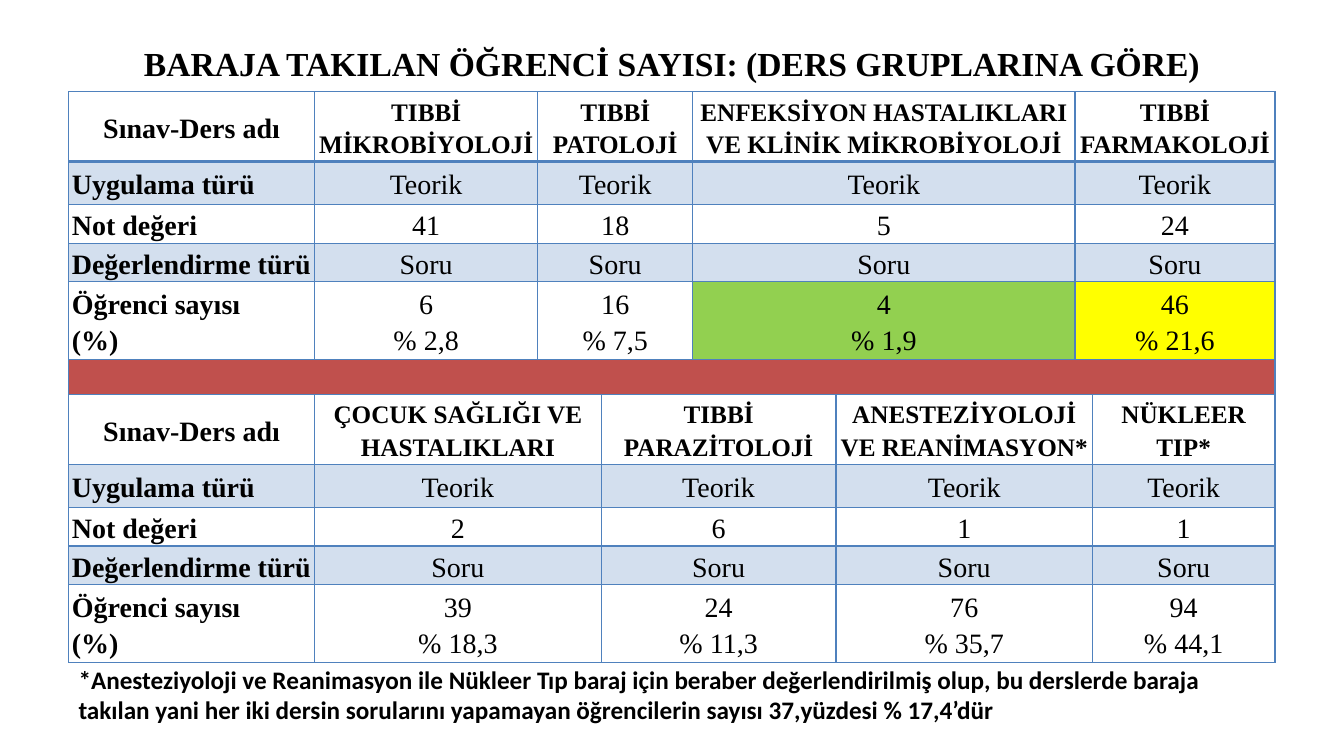
from lxml.etree import SubElement
from pptx import Presentation
from pptx.dml.color import RGBColor
from pptx.enum.text import MSO_ANCHOR as Anchor, PP_ALIGN as Align
from pptx.oxml.ns import qn
from pptx.util import Cm, Pt

BLACK = RGBColor(0x00, 0x00, 0x00)
BORDER_BLUE = RGBColor(0x4F, 0x81, 0xBD)
PALE_BLUE = RGBColor(0xD3, 0xDF, 0xEE)
GREEN = RGBColor(0x92, 0xD0, 0x50)
YELLOW = RGBColor(0xFF, 0xFF, 0x00)
RED = RGBColor(0xC0, 0x50, 0x4D)
SERIF = "Times New Roman"
SANS = "Calibri"

COLUMN_WIDTHS = [6.2, 5.62, 1.6, 2.31, 3.61, 6.02, 0.44, 4.6]
GROUP_HEIGHTS = [1.09, 0.89, 0.89, 1.8]
ROW_HEIGHTS = [1.7, *GROUP_HEIGHTS, 0.89, 1.65, *GROUP_HEIGHTS]
SEPARATOR_ROW = 5
ROW_LABELS = ["Sınav-Ders adı", "Uygulama türü", "Not değeri",
              "Değerlendirme türü", "Öğrenci sayısı\n(%)"]

# (first column, last column, course, grade value, students, percentage, highlight)
FIRST_GROUP = [
    (1, 1, "TIBBİ MİKROBİYOLOJİ", "41", "6", "% 2,8", None),
    (2, 3, "TIBBİ PATOLOJİ", "18", "16", "% 7,5", None),
    (4, 5, "ENFEKSİYON HASTALIKLARI VE KLİNİK MİKROBİYOLOJİ", "5", "4", "% 1,9", GREEN),
    (6, 7, "TIBBİ FARMAKOLOJİ", "24", "46", "% 21,6", YELLOW),
]
SECOND_GROUP = [
    (1, 2, "ÇOCUK SAĞLIĞI VE HASTALIKLARI", "2", "39", "% 18,3", None),
    (3, 4, "TIBBİ PARAZİTOLOJİ", "6", "24", "% 11,3", None),
    (5, 6, "ANESTEZİYOLOJİ VE REANİMASYON*", "1", "76", "% 35,7", None),
    (7, 7, "NÜKLEER TIP*", "1", "94", "% 44,1", None),
]


def write_text(frame, text, size=20, font=SERIF, bold=False, align=Align.LEFT, spacing=None):
    """Fill a text frame, one paragraph for each line of text."""
    frame.word_wrap = True
    for index, line in enumerate(text.split("\n")):
        paragraph = frame.add_paragraph() if index else frame.paragraphs[0]
        paragraph.alignment = align
        if spacing:
            paragraph.line_spacing = spacing
        run = paragraph.add_run()
        run.text = line
        run.font.size = Pt(size)
        run.font.name = font
        run.font.bold = bold
        run.font.color.rgb = BLACK


def set_borders(cell, top=1, bottom=1):
    properties = cell._tc.get_or_add_tcPr()
    for side, points in (("L", 1), ("R", 1), ("T", top), ("B", bottom)):
        line = SubElement(properties, qn(f"a:ln{side}"), w=str(Pt(points)))
        fill = SubElement(line, qn("a:solidFill"))
        SubElement(fill, qn("a:srgbClr"), val=str(BORDER_BLUE))


def set_fill(cell, color):
    if color is None:
        cell.fill.background()
    else:
        cell.fill.solid()
        cell.fill.fore_color.rgb = color


def write_cell(cell, text, color=None, **text_format):
    cell.vertical_anchor = Anchor.MIDDLE
    set_fill(cell, color)
    write_text(cell.text_frame, text, spacing=1.15, **text_format)


def fill_course_group(table, top_row, courses):
    """Write the five rows of one group of courses, starting at top_row."""
    for offset, label in enumerate(ROW_LABELS):
        write_cell(table.cell(top_row + offset, 0), label, PALE_BLUE if offset % 2 else None,
                   bold=True, align=Align.LEFT if offset else Align.CENTER)
    for first, last, course, grade, students, percentage, highlight in courses:
        values = [course, "Teorik", grade, "Soru", f"{students}\n{percentage}"]
        fills = [None, PALE_BLUE, None, PALE_BLUE, highlight]
        for offset, (value, color) in enumerate(zip(values, fills)):
            cell = table.cell(top_row + offset, first)
            if last > first:
                cell.merge(table.cell(top_row + offset, last))
            write_cell(cell, value, color, size=20 if offset else 18,
                       bold=offset == 0, align=Align.CENTER)


def add_course_table(slide, left, top):
    frame = slide.shapes.add_table(len(ROW_HEIGHTS), len(COLUMN_WIDTHS), left, top,
                                   Cm(sum(COLUMN_WIDTHS)), Cm(sum(ROW_HEIGHTS)))
    table = frame.table
    table.first_row = False
    table.horz_banding = False
    for column, width in zip(table.columns, COLUMN_WIDTHS):
        column.width = Cm(width)
    for index, (row, height) in enumerate(zip(table.rows, ROW_HEIGHTS)):
        row.height = Cm(height)
        for cell in row.cells:
            cell.margin_left = cell.margin_right = Cm(0.08)
            cell.margin_top = cell.margin_bottom = 0
            set_borders(cell, top=2.25 if index == 1 else 1, bottom=2.25 if index == 0 else 1)

    fill_course_group(table, 0, FIRST_GROUP)
    separator = table.cell(SEPARATOR_ROW, 0)
    separator.merge(table.cell(SEPARATOR_ROW, len(COLUMN_WIDTHS) - 1))
    set_fill(separator, RED)
    fill_course_group(table, SEPARATOR_ROW + 1, SECOND_GROUP)


def add_title(slide, left, top, width, height):
    frame = slide.shapes.add_textbox(left, top, width, height).text_frame
    frame.vertical_anchor = Anchor.MIDDLE
    write_text(frame, "BARAJA TAKILAN ÖĞRENCİ SAYISI: (DERS GRUPLARINA GÖRE)",
               size=24, bold=True, align=Align.CENTER, spacing=0.9)


def add_footnote(slide, left, top, width, height):
    frame = slide.shapes.add_textbox(left, top, width, height).text_frame
    write_text(frame, "*Anesteziyoloji ve Reanimasyon ile Nükleer Tıp baraj için beraber "
                      "değerlendirilmiş olup, bu derslerde baraja takılan yani her iki dersin "
                      "sorularını yapamayan öğrencilerin sayısı 37,yüzdesi % 17,4’dür",
               size=18, font=SANS, bold=True)


def main():
    presentation = Presentation()
    presentation.slide_width = Cm(33.87)
    presentation.slide_height = Cm(19.05)
    slide = presentation.slides.add_slide(presentation.slide_layouts[6])
    add_title(slide, Cm(2.33), Cm(1.01), Cm(29.21), Cm(1.3))
    add_course_table(slide, Cm(1.73), Cm(2.31))
    add_footnote(slide, Cm(1.73), Cm(16.61), Cm(29.82), Cm(1.8))
    presentation.save("out.pptx")


if __name__ == "__main__":
    main()
